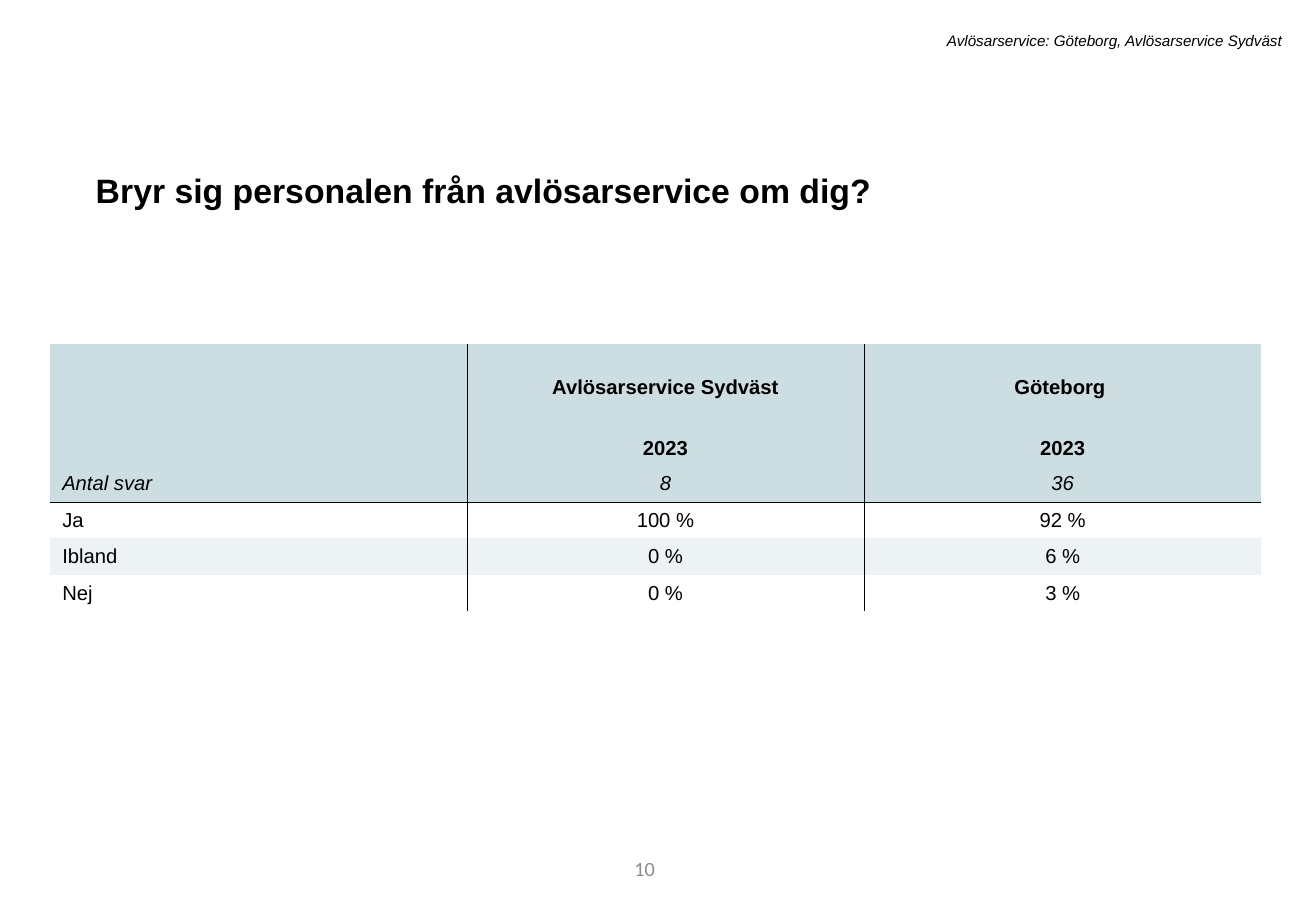
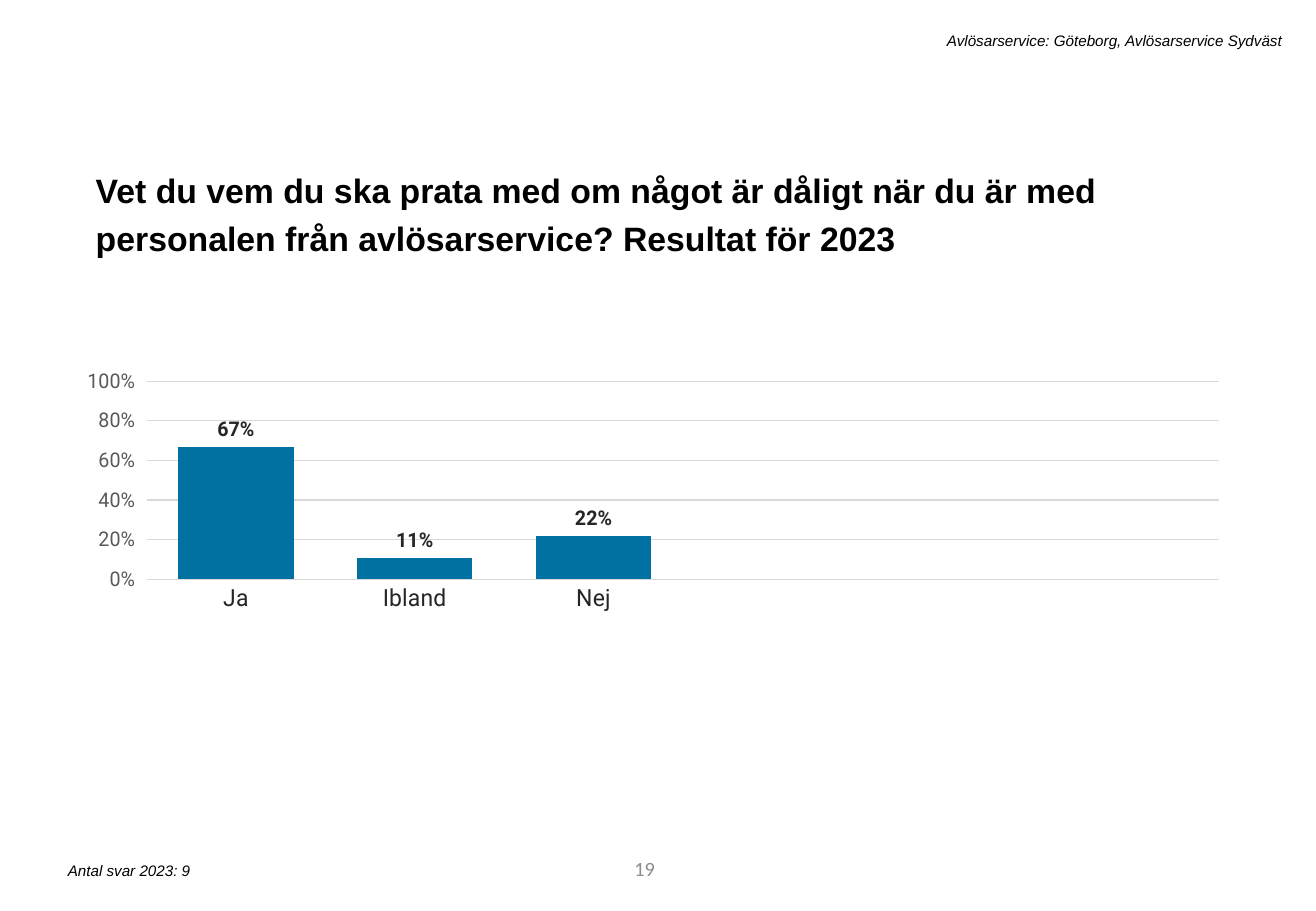
"""Build two survey result slides: a percentage table and a column chart."""
from dataclasses import dataclass

from lxml import etree
from pptx import Presentation
from pptx import util as u
from pptx.chart import data as chart_data
from pptx.dml.color import RGBColor
from pptx.enum import chart as charts, text
from pptx.oxml import ns, parse_xml

Pt = u.Pt
ALIGN = text.PP_ALIGN
ANCHOR = text.MSO_ANCHOR


@dataclass(frozen=True)
class Theme:
    body_font: str = "Arial"
    number_font: str = "Calibri"
    chart_font: str = "Roboto"
    black: str = "000000"
    page_grey: str = "8C8C8C"
    header_fill: str = "CCDEE1"
    band_fill: str = "EDF3F4"
    bar_blue: str = "0071A1"
    grid_grey: str = "D9D9D9"
    scale_grey: str = "595959"
    label_grey: str = "262626"
    title_size: float = 20
    category_size: float = 14
    body_size: float = 12
    chart_size: float = 10
    note_size: float = 9
    border: float = 0.25
    grid_line: float = 0.75


@dataclass(frozen=True)
class Style:
    size: float
    color: str
    font: str
    bold: bool = False
    italic: bool = False


@dataclass(frozen=True)
class Box:
    left: float
    top: float
    width: float
    height: float

    def lengths(self) -> tuple:
        return Pt(self.left), Pt(self.top), Pt(self.width), Pt(self.height)


@dataclass(frozen=True)
class TableRow:
    cells: tuple
    height: float
    style: Style
    anchor: object = ANCHOR.MIDDLE
    fill: str = ""


T = Theme()
TITLE = Style(T.title_size, T.black, T.body_font, bold=True)
NOTE = Style(T.note_size, T.black, T.body_font, italic=True)
PAGE = Style(T.body_size, T.page_grey, T.number_font)
BODY = Style(T.body_size, T.black, T.body_font)
HEAD = Style(T.body_size, T.black, T.body_font, bold=True)
COUNT = Style(T.body_size, T.black, T.body_font, italic=True)

TITLE_BOX = Box(49.7, 92.2, 676.8, 33.8)
SOURCE_BOX = Box(128.9, 15.1, 637.9, 18)
PAGE_BOX = Box(219.6, 500.4, 175.7, 28.8)
ANSWERS_BOX = Box(33.1, 506.9, 317.5, 18)
CHART_BOX = Box(51.8, 182.2, 676.8, 284.4)
TABLE_LEFT, TABLE_TOP = 29.7, 203.9
COLUMNS = (247, 235.5, 235.5)
HEAD_HEIGHT, ROW_HEIGHT = 36, 21.5
HEADER_ROWS = 3

ROWS = (
    TableRow(("", "Avlösarservice Sydväst", "Göteborg "), HEAD_HEIGHT, HEAD, ANCHOR.BOTTOM, T.header_fill),
    TableRow(("", "2023", "2023"), HEAD_HEIGHT, HEAD, ANCHOR.BOTTOM, T.header_fill),
    TableRow(("Antal svar", "8", "36"), ROW_HEIGHT, COUNT, fill=T.header_fill),
    TableRow(("Ja", "100 %", "92 %"), ROW_HEIGHT, BODY),
    TableRow(("Ibland", "0 %", "6 %"), ROW_HEIGHT, BODY, fill=T.band_fill),
    TableRow(("Nej", "0 %", "3 %"), ROW_HEIGHT, BODY),
)


def apply_font(font, style: Style) -> None:
    font.name = style.font
    font.size = Pt(style.size)
    font.bold = style.bold
    font.italic = style.italic
    font.color.rgb = RGBColor.from_string(style.color)


def add_text(slide, wording: str, box: Box, style: Style, align=ALIGN.LEFT,
             anchor=ANCHOR.TOP, fit=text.MSO_AUTO_SIZE.SHAPE_TO_FIT_TEXT):
    frame = slide.shapes.add_textbox(*box.lengths()).text_frame
    frame.word_wrap = True
    frame.auto_size = fit
    frame.vertical_anchor = anchor
    frame.text = wording
    paragraph = frame.paragraphs[0]
    paragraph.alignment = align
    apply_font(paragraph.runs[0].font, style)
    return paragraph


def add_survey_slide(deck, question: str, page: int):
    slide = deck.slides.add_slide(deck.slide_layouts[6])
    add_text(slide, str(page), PAGE_BOX, PAGE, ALIGN.RIGHT, ANCHOR.MIDDLE, text.MSO_AUTO_SIZE.NONE)
    title = add_text(slide, question, TITLE_BOX, TITLE)
    title.line_spacing = 1.2
    title.space_before = Pt(10)
    add_text(slide, "Avlösarservice: Göteborg, Avlösarservice Sydväst", SOURCE_BOX, NOTE, ALIGN.RIGHT)
    return slide


def set_borders(cell, drawn: dict) -> None:
    properties = cell._tc.get_or_add_tcPr()
    for side, visible in drawn.items():
        line = etree.SubElement(properties, ns.qn(f"a:ln{side}"), w=str(Pt(T.border)))
        if visible:
            fill = etree.SubElement(line, ns.qn("a:solidFill"))
            etree.SubElement(fill, ns.qn("a:srgbClr"), val=T.black)
        else:
            etree.SubElement(line, ns.qn("a:noFill"))


def add_answer_table(slide, rows: tuple) -> None:
    box = Box(TABLE_LEFT, TABLE_TOP, sum(COLUMNS), sum(row.height for row in rows))
    table = slide.shapes.add_table(len(rows), len(COLUMNS), *box.lengths()).table
    table.first_row = table.horz_banding = False
    for column, width in zip(table.columns, COLUMNS):
        column.width = Pt(width)
    for r, row in enumerate(rows):
        table.rows[r].height = Pt(row.height)
        for c, wording in enumerate(row.cells):
            cell = table.cell(r, c)
            set_borders(cell, {"L": c > 0, "R": c < len(COLUMNS) - 1,
                               "T": r == HEADER_ROWS, "B": r == HEADER_ROWS - 1})
            if row.fill:
                cell.fill.solid()
                cell.fill.fore_color.rgb = RGBColor.from_string(row.fill)
            else:
                cell.fill.background()
            cell.vertical_anchor = row.anchor
            if wording:
                cell.text_frame.text = wording
                paragraph = cell.text_frame.paragraphs[0]
                paragraph.alignment = ALIGN.CENTER if c else ALIGN.LEFT
                apply_font(paragraph.runs[0].font, row.style)


def set_plot_area(chart, x: float, y: float, w: float, h: float) -> None:
    area = chart._chartSpace.chart.plotArea
    for old in area.findall(ns.qn("c:layout")):
        area.remove(old)
    sizes = "".join(f'<c:{tag} val="{val}"/>' for tag, val in zip("xywh", (x, y, w, h)))
    area.insert(0, parse_xml(
        f'<c:layout {ns.nsdecls("c")}><c:manualLayout><c:layoutTarget val="inner"/>'
        f'<c:xMode val="edge"/><c:yMode val="edge"/>{sizes}</c:manualLayout></c:layout>'))


def set_grid_line(line) -> None:
    line.color.rgb = RGBColor.from_string(T.grid_grey)
    line.width = Pt(T.grid_line)


def add_answer_chart(slide, categories: tuple, shares: tuple) -> None:
    answers = chart_data.CategoryChartData(number_format="0%")
    answers.categories = categories
    answers.add_series("Series 1", shares)
    chart = slide.shapes.add_chart(
        charts.XL_CHART_TYPE.COLUMN_CLUSTERED, *CHART_BOX.lengths(), answers).chart
    chart.has_title = chart.has_legend = False
    apply_font(chart.font, Style(T.chart_size, T.black, T.chart_font))
    set_plot_area(chart, 0.025, 0.154, 0.966, 0.413)

    category_axis = chart.category_axis
    category_axis.major_tick_mark = charts.XL_TICK_MARK.NONE
    apply_font(category_axis.tick_labels.font, Style(T.category_size, T.label_grey, T.chart_font))
    set_grid_line(category_axis.format.line)

    scale = chart.value_axis
    scale.minimum_scale, scale.maximum_scale, scale.major_unit = 0, 1, 0.2
    scale.major_tick_mark = charts.XL_TICK_MARK.OUTSIDE
    scale.tick_labels.number_format = "0%"
    scale.tick_labels.number_format_is_linked = False
    apply_font(scale.tick_labels.font, Style(T.body_size, T.scale_grey, T.chart_font))
    scale.format.line.fill.background()
    set_grid_line(scale.major_gridlines.format.line)

    plot = chart.plots[0]
    plot.gap_width = 55
    plot.vary_by_categories = False
    bars = plot.series[0]
    bars.format.fill.solid()
    bars.format.fill.fore_color.rgb = RGBColor.from_string(T.bar_blue)
    labels = bars.data_labels
    labels.show_value = True
    labels.position = charts.XL_LABEL_POSITION.OUTSIDE_END
    labels.number_format = "0%"
    labels.number_format_is_linked = False
    apply_font(labels.font, Style(T.body_size, T.label_grey, T.chart_font, bold=True))


def main() -> None:
    deck = Presentation()
    deck.slide_width, deck.slide_height = Pt(780), Pt(540)

    caring = add_survey_slide(deck, "Bryr sig personalen från avlösarservice om dig?", 10)
    add_answer_table(caring, ROWS)

    contact = add_survey_slide(
        deck, "Vet du vem du ska prata med om något är dåligt när du är med "
        "personalen från avlösarservice? Resultat för 2023", 19)
    add_text(contact, "Antal svar 2023: 9", ANSWERS_BOX, NOTE)
    add_answer_chart(contact, ("Ja", "Ibland", "Nej", "", "", ""),
                     (0.67, 0.11, 0.22, None, None, None))
    deck.save("out.pptx")


if __name__ == "__main__":
    main()
